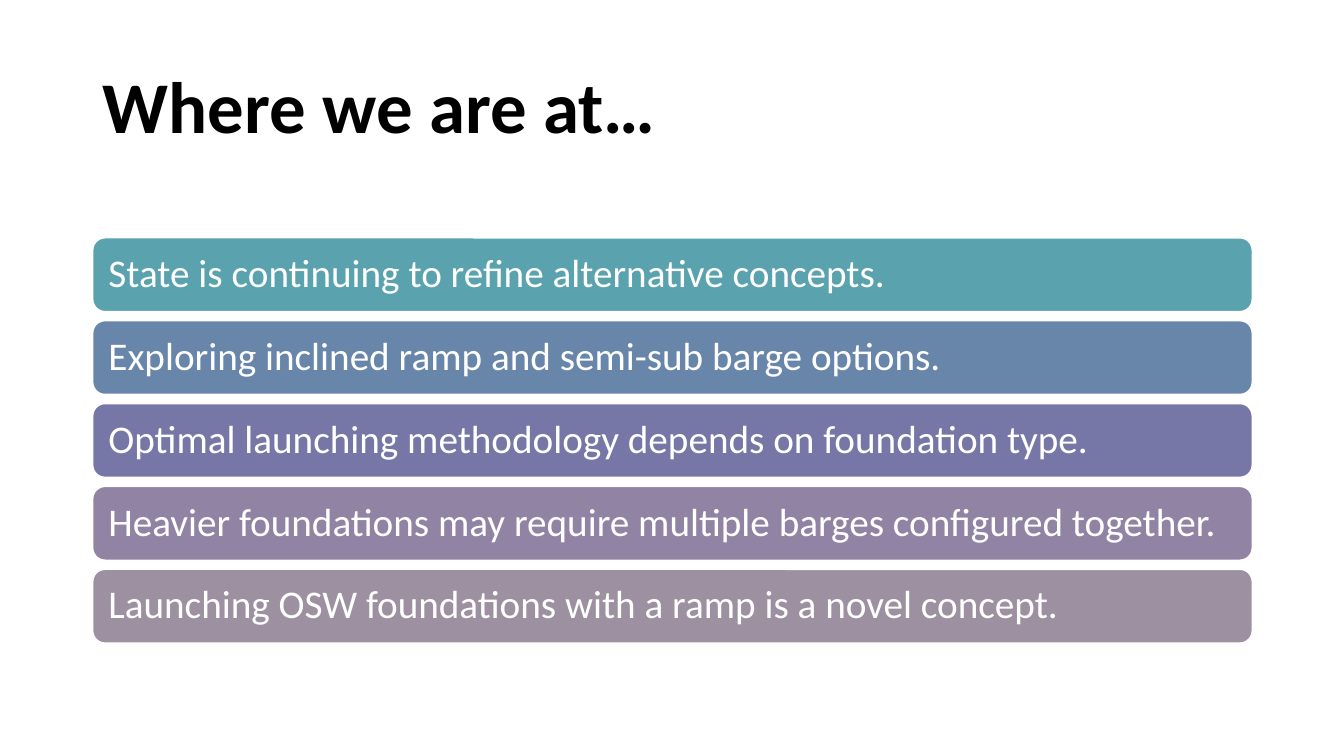
from pptx import Presentation
from pptx.dml.color import RGBColor
from pptx.enum.shapes import MSO_SHAPE as Preset
from pptx.enum.text import MSO_ANCHOR as Anchor, MSO_AUTO_SIZE as AutoSize, PP_ALIGN as Align
from pptx.util import Inches, Pt

COLOURS = {
    "title": "000000",
    "light": "FFFFFF",
    "teal": "5AA2AE",
    "blue": "6885AA",
    "indigo": "7677A6",
    "purple": "9083A3",
    "mauve": "9D90A0",
}
FINDINGS = [
    ("State is continuing to refine alternative concepts.", "teal"),
    ("Exploring inclined ramp and semi-sub barge options.", "blue"),
    ("Optimal launching methodology depends on foundation type.", "indigo"),
    ("Heavier foundations may require multiple barges configured together.", "purple"),
    ("Launching OSW foundations with a ramp is a novel concept.", "mauve"),
]
WIDTH, HEIGHT = 13.33, 7.5
MARGIN = 0.92
CONTENT_WIDTH = 11.5
BAR_SHARE = 0.89


def colour(name):
    return RGBColor.from_string(COLOURS[name])


def format_text(frame, size, ink, bold=False):
    frame.word_wrap = True
    frame.auto_size = AutoSize.NONE
    frame.vertical_anchor = Anchor.MIDDLE
    paragraph = frame.paragraphs[0]
    paragraph.alignment = Align.LEFT
    paragraph.line_spacing = 0.9
    font = paragraph.runs[0].font
    font.name = "Calibri"
    font.size = Pt(size)
    font.bold = bold
    font.color.rgb = colour(ink)


def place_heading(slide, left, top, width, height):
    heading = slide.shapes.title
    heading.left, heading.top = Inches(left), Inches(top)
    heading.width, heading.height = Inches(width), Inches(height)
    heading.text_frame.text = "Where we are at…"
    format_text(heading.text_frame, 52, "title", bold=True)


def place_findings(slide, left, top, width, height):
    pitch = height / (len(FINDINGS) - 1 + BAR_SHARE)
    for row, (finding, fill) in enumerate(FINDINGS):
        bar = slide.shapes.add_shape(
            Preset.ROUNDED_RECTANGLE, Inches(left), Inches(top + row * pitch),
            Inches(width), Inches(pitch * BAR_SHARE))
        bar.shadow.inherit = False
        bar.fill.solid()
        bar.fill.fore_color.rgb = colour(fill)
        bar.line.color.rgb = colour("light")
        bar.line.width = Pt(1)
        frame = bar.text_frame
        frame.text = finding
        frame.margin_left = frame.margin_right = Inches(0.12)
        format_text(frame, 28, "light")


def main():
    deck = Presentation()
    deck.slide_width, deck.slide_height = Inches(WIDTH), Inches(HEIGHT)
    slide = deck.slides.add_slide(deck.slide_layouts[5])
    place_heading(slide, MARGIN, 0.34, CONTENT_WIDTH, 1.51)
    place_findings(slide, MARGIN, 2.36, CONTENT_WIDTH, 4.02)
    deck.save("out.pptx")


if __name__ == "__main__":
    main()
